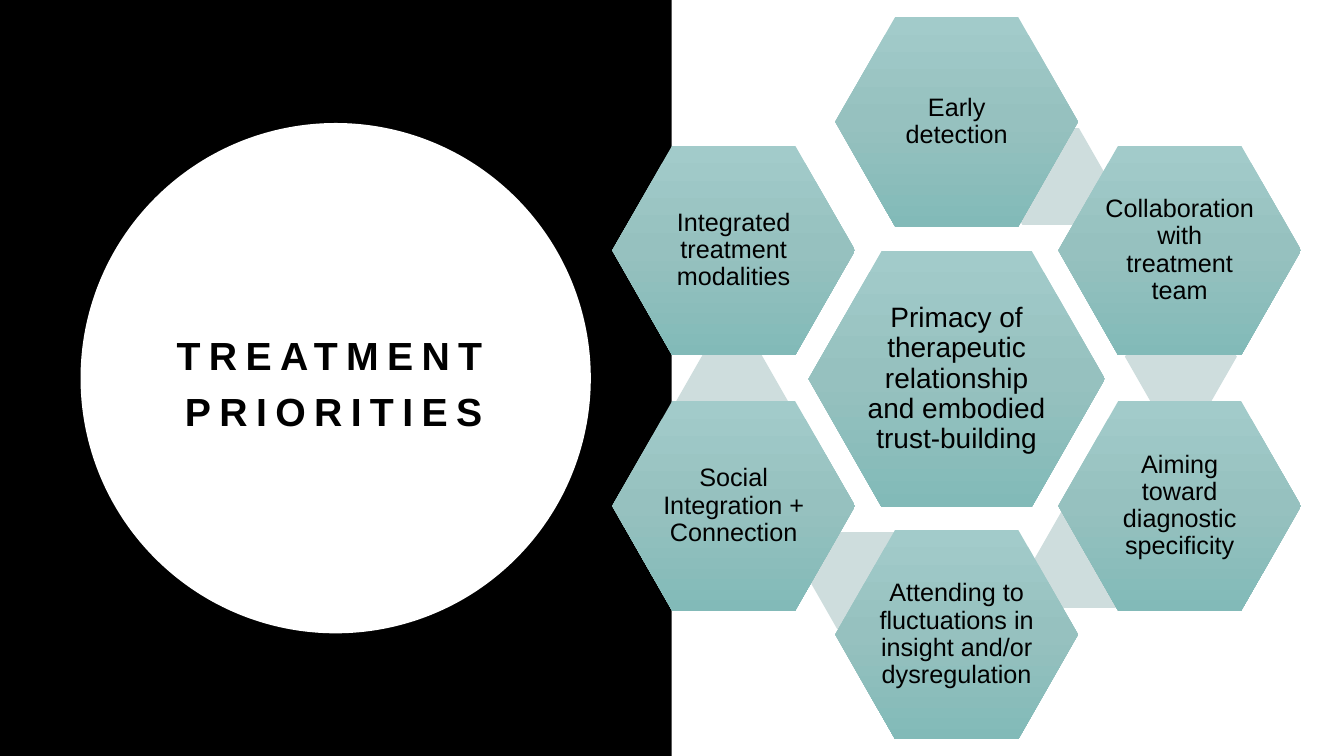
import copy

import pptx
import pptx.dml.color
import pptx.enum.shapes
import pptx.enum.text
import pptx.util
from pptx.util import Cm

BLACK = "000000"
WHITE = "FFFFFF"
LINK_FILL = "CEDDDD"
HEXAGON_STOPS = ((0, "A2CBCA"), (0.5, "96C1BF"), (1, "82BAB8"))

RING_X, RING_Y = 24.11, 9.53
COLUMN_STEP = 5.62
POLE_STEP, SIDE_STEP = 6.46, 3.22

# Label, column and vertical offset, then the centre of the link behind it.
PRIORITIES = (
    ("Early detection", 0, -POLE_STEP, (26.48, 4.45)),
    ("Collaboration with treatment team", 1, -SIDE_STEP, (29.76, 8.99)),
    ("Aiming toward diagnostic specificity", 1, SIDE_STEP, (27.47, 14.1)),
    ("Attending to fluctuations in insight and/or dysregulation",
     0, POLE_STEP, (21.81, 14.63)),
    ("Social Integration + Connection", -1, SIDE_STEP, (18.45, 10.11)),
    ("Integrated treatment modalities", -1, -SIDE_STEP, None),
)


def colour(value):
    return pptx.dml.color.RGBColor.from_string(value)


class SlideBuilder:
    font_name = "Arial"

    def __init__(self, slide):
        self.slide = slide

    def shape(self, kind, left, top, width, height, fill=None):
        shape = self.slide.shapes.add_shape(
            kind, Cm(left), Cm(top), Cm(width), Cm(height))
        shape.shadow.inherit = False
        shape.line.fill.background()
        if fill:
            shape.fill.solid()
            shape.fill.fore_color.rgb = colour(fill)
        return shape

    def style_text(self, text_frame, size, line_spacing, bold=False):
        text_frame.word_wrap = True
        text_frame.auto_size = pptx.enum.text.MSO_AUTO_SIZE.NONE
        text_frame.vertical_anchor = pptx.enum.text.MSO_ANCHOR.MIDDLE
        paragraph = text_frame.paragraphs[0]
        paragraph.alignment = pptx.enum.text.PP_ALIGN.CENTER
        paragraph.line_spacing = line_spacing
        for run in paragraph.runs:
            run.font.name = self.font_name
            run.font.size = pptx.util.Pt(size)
            run.font.bold = bold
            run.font.color.rgb = colour(BLACK)

    def title(self, text, left, top, width, height):
        title = self.slide.shapes.title
        title.left, title.top = Cm(left), Cm(top)
        title.width, title.height = Cm(width), Cm(height)
        title.text_frame.text = text
        self.style_text(title.text_frame, 28, 1.2, bold=True)
        for run in title.text_frame.paragraphs[0].runs:
            run._r.get_or_add_rPr().set("spc", "600")
        # Bring the title in front of the circle.
        title._element.getparent().append(title._element)

    def hexagon(self, centre_x, centre_y, width, height, fill=None):
        shape = self.shape(
            pptx.enum.shapes.MSO_SHAPE.HEXAGON,
            centre_x - width / 2, centre_y - height / 2, width, height, fill)
        shape.adjustments[0] = 0.286
        return shape

    def priority(self, text, centre_x, centre_y, width, height, size):
        shape = self.hexagon(centre_x, centre_y, width, height)
        self.shade(shape)
        frame = shape.text_frame
        frame.margin_left = frame.margin_right = Cm(0.08)
        frame.margin_top = frame.margin_bottom = Cm(0.08)
        frame.text = text
        self.style_text(frame, size, 0.9)

    def shade(self, shape):
        """Fill with the three-stop gradient, running downwards."""
        shape.fill.gradient()
        shape.fill.gradient_angle = 270
        first_stop = shape._element.spPr.find(".//" + pptx.oxml.ns.qn("a:gs"))
        first_stop.addnext(copy.deepcopy(first_stop))
        for stop, (position, value) in zip(
                shape.fill.gradient_stops, HEXAGON_STOPS):
            stop.position = position
            stop.color.rgb = colour(value)


def main():
    presentation = pptx.Presentation()
    presentation.slide_width = Cm(33.87)
    presentation.slide_height = Cm(19.05)
    builder = SlideBuilder(
        presentation.slides.add_slide(presentation.slide_layouts[5]))

    builder.shape(pptx.enum.shapes.MSO_SHAPE.RECTANGLE,
                  0, 0, 16.93, 19.05, BLACK)
    builder.shape(pptx.enum.shapes.MSO_SHAPE.OVAL,
                  2.03, 3.1, 12.86, 12.86, WHITE)
    builder.title("TREATMENT PRIORITIES", 2.9, 6.35, 11.02, 6.35)

    builder.priority(
        "Primacy of therapeutic relationship and embodied trust-building",
        RING_X, RING_Y + 0.02, 7.47, 6.45, 20)
    for text, column, offset, link in PRIORITIES:
        if link:
            builder.hexagon(*link, 2.82, 2.44, LINK_FILL)
        builder.priority(text, RING_X + column * COLUMN_STEP,
                         RING_Y + offset, 6.12, 5.28, 18)

    presentation.save("out.pptx")


if __name__ == "__main__":
    main()
